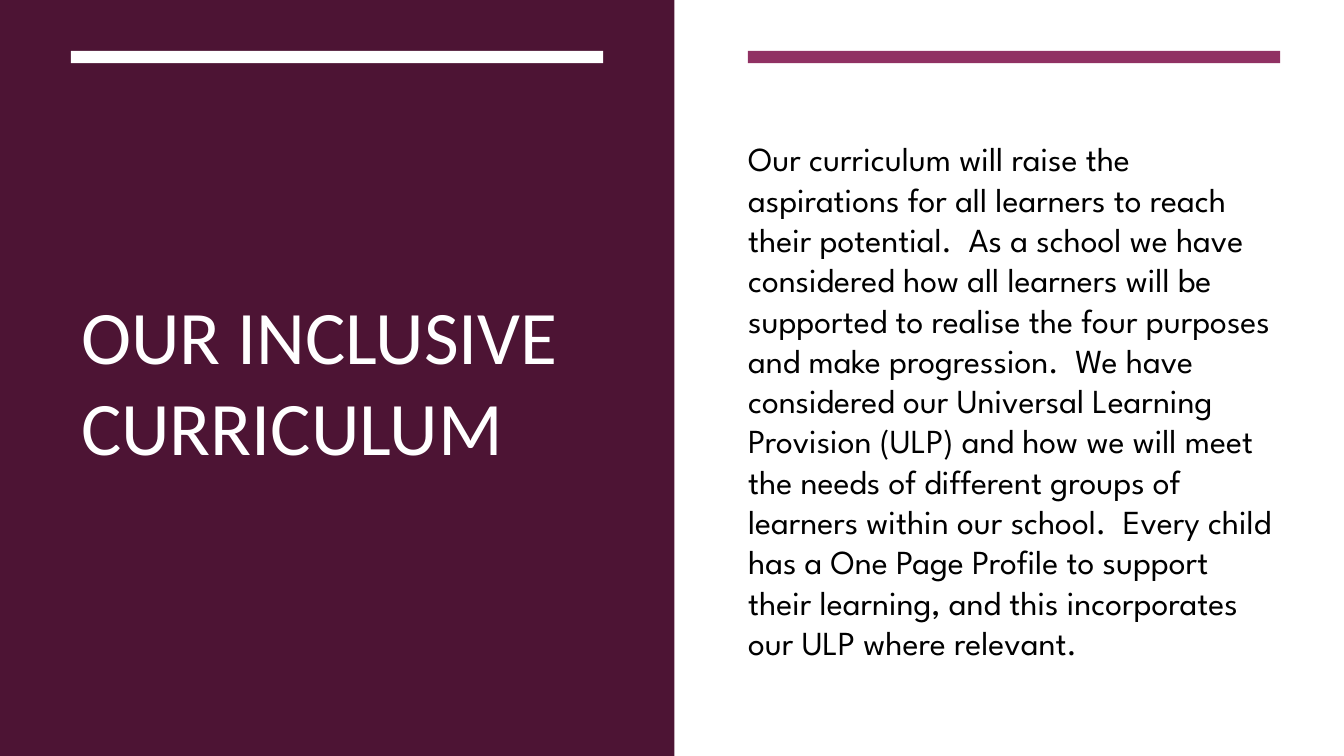
from lxml.etree import SubElement
from pptx import Presentation
from pptx.dml.color import RGBColor as Rgb
from pptx.enum.shapes import MSO_SHAPE as Preset
from pptx.enum.text import MSO_ANCHOR as Anchor, MSO_AUTO_SIZE as AutoSize, PP_ALIGN as Align
from pptx.oxml.ns import qn
from pptx.util import Cm, Pt

WHITE = Rgb(0xFF, 0xFF, 0xFF)
BLACK = Rgb(0, 0, 0)
PLUM = Rgb(0x4D, 0x14, 0x34)
MAGENTA = Rgb(0x90, 0x31, 0x63)

SLIDE_WIDTH, SLIDE_HEIGHT = Cm(33.87), Cm(19.05)
PANEL_WIDTH = Cm(17)
COLUMN_WIDTH = Cm(13.41)
LEFT_COLUMN, RIGHT_COLUMN = Cm(1.79), Cm(18.85)
BAR_TOP, BAR_HEIGHT = Cm(1.28), Cm(0.31)
TEXT_HEIGHT = Cm(13.41)
INSET = Cm(0.25)

HEADING = "OUR INCLUSIVE CURRICULUM"
STATEMENT = (
    "Our curriculum will raise the aspirations for all learners to reach their potential.  "
    "As a school we have considered how all learners will be supported to realise the four "
    "purposes and make progression.  We have considered our Universal Learning Provision "
    "(ULP) and how we will meet the needs of different groups of learners within our school.  "
    "Every child has a One Page Profile to support their learning, and this incorporates our "
    "ULP where relevant."
)


def add_block(slide, left, top, width, height, colour):
    """Add a plain filled rectangle behind the title."""
    block = slide.shapes.add_shape(Preset.RECTANGLE, left, top, width, height)
    block.shadow.inherit = False
    block.fill.solid()
    block.fill.fore_color.rgb = colour
    block.line.fill.background()
    slide.shapes.title.element.addprevious(block.element)


def fill_placeholder(holder, left, top, width, text, font_name, size, colour):
    """Move a placeholder, set its text and return the paragraph."""
    holder.left, holder.top, holder.width, holder.height = left, top, width, TEXT_HEIGHT
    frame = holder.text_frame
    frame.word_wrap = True
    frame.auto_size = AutoSize.NONE
    frame.vertical_anchor = Anchor.MIDDLE
    frame.text = text
    paragraph = frame.paragraphs[0]
    paragraph.alignment = Align.LEFT
    paragraph.font.name = font_name
    paragraph.font.size = size
    paragraph.font.color.rgb = colour
    return paragraph


def remove_bullet(paragraph):
    """Turn a list paragraph into flush plain text."""
    properties = paragraph._p.get_or_add_pPr()
    properties.set("marL", "0")
    properties.set("indent", "0")
    bullet_none = SubElement(properties, qn("a:buNone"))
    properties.find(qn("a:defRPr")).addprevious(bullet_none)


def main():
    """Build the slide and save it."""
    deck = Presentation()
    deck.slide_width, deck.slide_height = SLIDE_WIDTH, SLIDE_HEIGHT
    slide = deck.slides.add_slide(deck.slide_layouts[1])

    add_block(slide, 0, 0, SLIDE_WIDTH, SLIDE_HEIGHT, WHITE)
    add_block(slide, 0, 0, PANEL_WIDTH, SLIDE_HEIGHT, PLUM)
    for left, colour in ((LEFT_COLUMN, WHITE), (RIGHT_COLUMN, MAGENTA)):
        add_block(slide, left, BAR_TOP, COLUMN_WIDTH, BAR_HEIGHT, colour)

    fill_placeholder(slide.shapes.title, LEFT_COLUMN, Cm(2.87), COLUMN_WIDTH,
                     HEADING, "Calibri", Pt(54), WHITE)
    statement = fill_placeholder(slide.placeholders[1], RIGHT_COLUMN - INSET, Cm(3.38),
                                 COLUMN_WIDTH + 2 * INSET, STATEMENT,
                                 "League Spartan", Pt(24), BLACK)
    statement.line_spacing = Pt(28.8)
    statement.space_after = Pt(6)
    remove_bullet(statement)

    deck.save("out.pptx")


if __name__ == "__main__":
    main()
